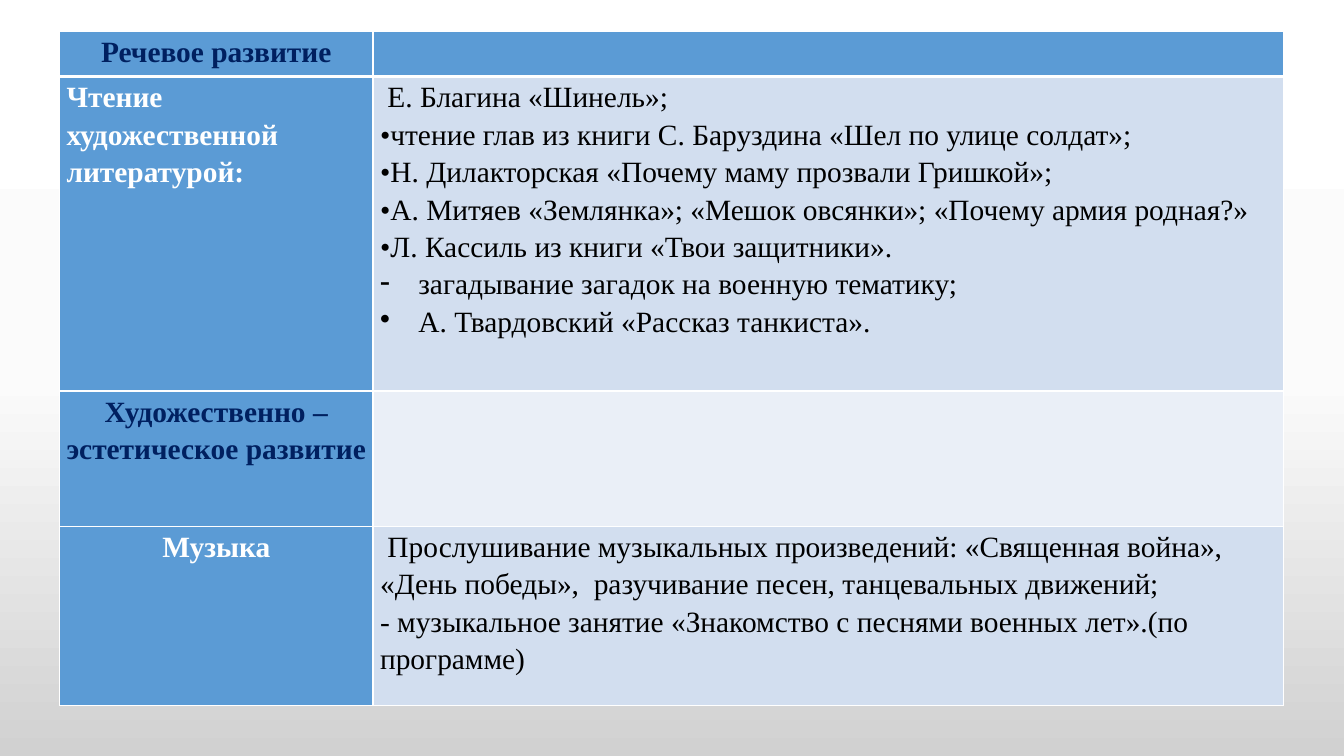
import copy
import pptx
import pptx.dml.color
import pptx.enum.text
import pptx.oxml
import pptx.oxml.ns
import pptx.util
from dataclasses import dataclass

Inches = pptx.util.Inches
Pt = pptx.util.Pt
ALIGN = pptx.enum.text.PP_ALIGN


@dataclass(frozen=True)
class Theme:
    """Colours and type sizes of the slide."""
    font: str = "Times New Roman"
    size: int = 21
    spacing: float = 1.15
    navy: str = "002060"
    white: str = "FFFFFF"
    black: str = "000000"
    blue: str = "5B9BD5"
    bands: tuple = ("D2DEEF", "EAEFF7")
    backdrop: tuple = ((0, "FFFFFF"), (0.5, "FBFBFB"), (1, "D1D1D1"))


@dataclass(frozen=True)
class Item:
    """One paragraph with an optional bullet."""
    text: str
    bullet: str = ""


def rgb(value):
    """Return a colour from its hex code."""
    return pptx.dml.color.RGBColor.from_string(value)


class PlanSlide:
    """Draws the elements of the plan on one slide."""

    def __init__(self, deck, theme):
        """Add a blank slide to the deck."""
        self.theme = theme
        self.slide = deck.slides.add_slide(deck.slide_layouts[6])

    def background(self):
        """Fill the background with a vertical gradient."""
        fill = self.slide.background.fill
        fill.gradient()
        fill.gradient_angle = 270
        stop_list = self.slide.element.xpath(".//a:gsLst")[0]
        stop_list.append(copy.deepcopy(stop_list[-1]))
        for stop, (position, color) in zip(fill.gradient_stops, self.theme.backdrop):
            stop.position = position
            stop.color.rgb = rgb(color)

    def table(self, left, top, widths, heights):
        """Add an empty table and return it."""
        frame = self.slide.shapes.add_table(
            len(heights), len(widths), Inches(left), Inches(top),
            Inches(sum(widths)), Inches(sum(heights)))
        for column, width in zip(frame.table.columns, widths):
            column.width = Inches(width)
        for row, height in zip(frame.table.rows, heights):
            row.height = Inches(height)
        return frame.table

    def cell(self, cell, items, fill, color, bold=False, align=ALIGN.LEFT, thick=()):
        """Fill one cell with paragraphs, a colour and borders."""
        cell.margin_left = cell.margin_right = Inches(0.07)
        cell.margin_top = cell.margin_bottom = 0
        for index, item in enumerate(items):
            frame = cell.text_frame
            paragraph = frame.add_paragraph() if index else frame.paragraphs[0]
            self.paragraph(paragraph, item, color, bold, align)
        self.borders(cell, thick)
        cell.fill.solid()
        cell.fill.fore_color.rgb = rgb(fill)

    def paragraph(self, paragraph, item, color, bold, align):
        """Write and format one paragraph."""
        paragraph.text = item.text
        paragraph.alignment = align
        paragraph.line_spacing = self.theme.spacing
        font = paragraph.font
        font.name = self.theme.font
        font.size = Pt(self.theme.size)
        font.bold = bold
        font.color.rgb = rgb(color)
        if item.bullet:
            properties = paragraph._p.get_or_add_pPr()
            indent = Inches(0.38)
            properties.set("marL", str(indent))
            properties.set("indent", str(-indent))
            mark = pptx.oxml.parse_xml(
                f'<a:buChar {pptx.oxml.ns.nsdecls("a")} char="{item.bullet}"/>')
            properties.xpath("./a:defRPr")[0].addprevious(mark)

    def borders(self, cell, thick):
        """Draw the four white borders of a cell."""
        properties = cell._tc.get_or_add_tcPr()
        for side in "LRTB":
            width = Pt(3 if side in thick else 1)
            properties.append(pptx.oxml.parse_xml(
                f'<a:ln{side} {pptx.oxml.ns.nsdecls("a")} w="{width}"><a:solidFill>'
                f'<a:srgbClr val="{self.theme.white}"/></a:solidFill></a:ln{side}>'))


def main():
    """Build the plan slide and save it."""
    theme = Theme()
    deck = pptx.Presentation()
    deck.slide_width, deck.slide_height = Inches(13.33), Inches(7.5)
    plan = PlanSlide(deck, theme)
    plan.background()

    reading = [
        Item(" Е. Благина «Шинель»; \n"
             "•чтение глав из книги С. Баруздина «Шел по улице солдат»; \n"
             "•Н. Дилакторская «Почему маму прозвали Гришкой»;\n"
             "•А. Митяев «Землянка»; «Мешок овсянки»; «Почему армия родная?» \n"
             "•Л. Кассиль из книги «Твои защитники»."),
        Item("загадывание загадок на военную тематику;", "-"),
        Item("А. Твардовский «Рассказ танкиста».", "•"),
    ]
    music = [
        Item(" Прослушивание музыкальных произведений: «Священная война», "
             "«День победы»,  разучивание песен, танцевальных движений;\n"
             "- музыкальное занятие «Знакомство с песнями военных лет».(по программе)"),
    ]
    empty = [Item("")]
    sections = [
        ("Речевое развитие", theme.navy, ALIGN.CENTER, empty),
        ("Чтение художественной литературой:", theme.white, ALIGN.JUSTIFY, reading),
        ("Художественно – эстетическое развитие", theme.navy, ALIGN.CENTER, empty),
        ("Музыка", theme.white, ALIGN.CENTER, music),
    ]
    table = plan.table(0.59, 0.31, (3.11, 9.03), (0.45, 3.12, 1.34, 1.78))
    for row, (heading, color, align, activities) in enumerate(sections):
        thick = {0: "B", 1: "T"}.get(row, "")
        band = theme.bands[(row - 1) % 2] if row else theme.blue
        plan.cell(table.cell(row, 0), [Item(heading)], theme.blue, color, True, align, thick)
        plan.cell(table.cell(row, 1), activities, band, theme.black, thick=thick)
    deck.save("out.pptx")


if __name__ == "__main__":
    main()
